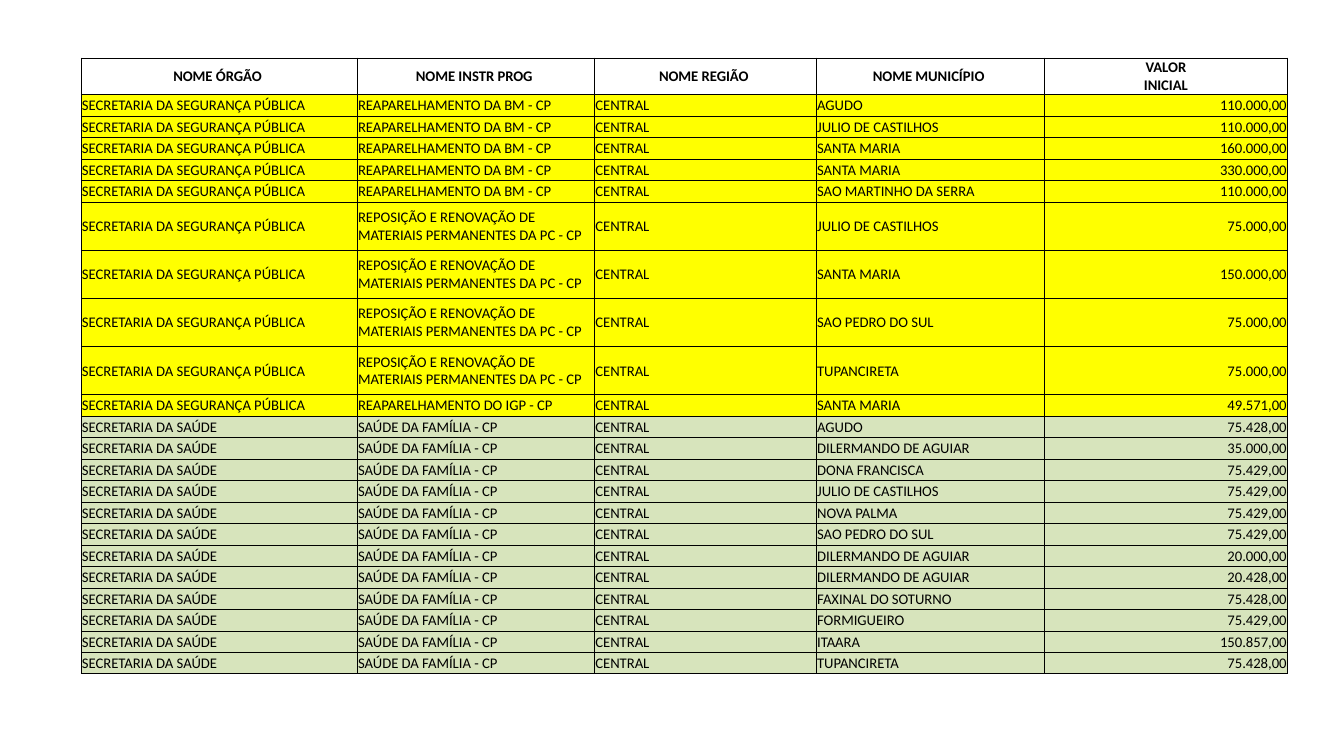
from pptx import Presentation
from pptx.dml.color import RGBColor
from pptx.enum import text
from pptx.oxml import parse_xml
from pptx.oxml.ns import nsdecls
from pptx.util import Pt

BLACK = RGBColor(0x00, 0x00, 0x00)
YELLOW = RGBColor(0xFF, 0xFF, 0x00)
GREEN = RGBColor(0xD7, 0xE4, 0xBC)

HEADERS = ["NOME ÓRGÃO ", "NOME INSTR PROG ", "NOME REGIÃO ", "NOME MUNICÍPIO ", "VALOR\vINICIAL"]
REGION = "CENTRAL"
SECURITY = "SECRETARIA DA SEGURANÇA PÚBLICA"
HEALTH = "SECRETARIA DA SAÚDE"
RENEWAL = "REPOSIÇÃO E RENOVAÇÃO DE MATERIAIS PERMANENTES DA PC - CP"

# (department, programme, fill, row height, [(town, amount)])
GROUPS = [
    (SECURITY, "REAPARELHAMENTO DA BM - CP", YELLOW, 15.35, [
        ("AGUDO", "110.000,00"),
        ("JULIO DE CASTILHOS", "110.000,00"),
        ("SANTA MARIA", "160.000,00"),
        ("SANTA MARIA", "330.000,00"),
        ("SAO MARTINHO DA SERRA", "110.000,00"),
    ]),
    (SECURITY, RENEWAL, YELLOW, 34.45, [
        ("JULIO DE CASTILHOS", "75.000,00"),
        ("SANTA MARIA", "150.000,00"),
        ("SAO PEDRO DO SUL", "75.000,00"),
        ("TUPANCIRETA", "75.000,00"),
    ]),
    (SECURITY, "REAPARELHAMENTO DO IGP - CP", YELLOW, 15.35, [
        ("SANTA MARIA", "49.571,00"),
    ]),
    (HEALTH, "SAÚDE DA FAMÍLIA - CP", GREEN, 15.35, [
        ("AGUDO", "75.428,00"),
        ("DILERMANDO DE AGUIAR", "35.000,00"),
        ("DONA FRANCISCA", "75.429,00"),
        ("JULIO DE CASTILHOS", "75.429,00"),
        ("NOVA PALMA", "75.429,00"),
        ("SAO PEDRO DO SUL", "75.429,00"),
        ("DILERMANDO DE AGUIAR", "20.000,00"),
        ("DILERMANDO DE AGUIAR", "20.428,00"),
        ("FAXINAL DO SOTURNO", "75.428,00"),
        ("FORMIGUEIRO", "75.429,00"),
        ("ITAARA", "150.857,00"),
        ("TUPANCIRETA", "75.428,00"),
    ]),
]
COLUMN_WIDTHS = [197.3, 169.5, 158.4, 162.9, 173.7]
HEADER_HEIGHT = 25.9


def add_borders(cell):
    tcPr = cell._tc.get_or_add_tcPr()
    for side in ("lnL", "lnR", "lnT", "lnB"):
        tcPr.append(parse_xml(
            f'<a:{side} {nsdecls("a")} w="{Pt(0.5)}"><a:solidFill>'
            f'<a:srgbClr val="{BLACK}"/></a:solidFill></a:{side}>'))


def fill_cell(cell, content, align, fill=None, bold=False):
    cell.text = content
    cell.vertical_anchor = text.MSO_ANCHOR.MIDDLE
    cell.margin_left = cell.margin_top = cell.margin_right = Pt(0.6)
    cell.margin_bottom = 0
    add_borders(cell)
    if fill is None:
        cell.fill.background()
    else:
        cell.fill.solid()
        cell.fill.fore_color.rgb = fill
    p = cell.text_frame.paragraphs[0]
    p.alignment = align
    p.font.name = "Calibri"
    p.font.size = Pt(10.5)
    p.font.bold = bold
    p.font.color.rgb = BLACK


def add_budget_table(s, left, top):
    rows = [(height, fill, (department, programme, REGION, town, amount))
            for department, programme, fill, height, grants in GROUPS
            for town, amount in grants]
    total_height = HEADER_HEIGHT + sum(row[0] for row in rows)
    tbl = s.shapes.add_table(len(rows) + 1, len(HEADERS), Pt(left), Pt(top),
                             Pt(sum(COLUMN_WIDTHS)), Pt(total_height)).table
    tbl.first_row = tbl.horz_banding = False
    for column, width in zip(tbl.columns, COLUMN_WIDTHS):
        column.width = Pt(width)

    tbl.rows[0].height = Pt(HEADER_HEIGHT)
    for c, header in enumerate(HEADERS):
        fill_cell(tbl.cell(0, c), header, text.PP_ALIGN.CENTER, bold=True)
    for r, (height, fill, values) in enumerate(rows, 1):
        tbl.rows[r].height = Pt(height)
        for c, value in enumerate(values):
            last = c == len(values) - 1
            align = text.PP_ALIGN.RIGHT if last else text.PP_ALIGN.LEFT
            fill_cell(tbl.cell(r, c), value, align, fill)


def main():
    prs = Presentation()
    prs.slide_width, prs.slide_height = Pt(960), Pt(540)
    s = prs.slides.add_slide(prs.slide_layouts[6])
    add_budget_table(s, 57.9, 41.4)
    prs.save("out.pptx")


if __name__ == "__main__":
    main()
